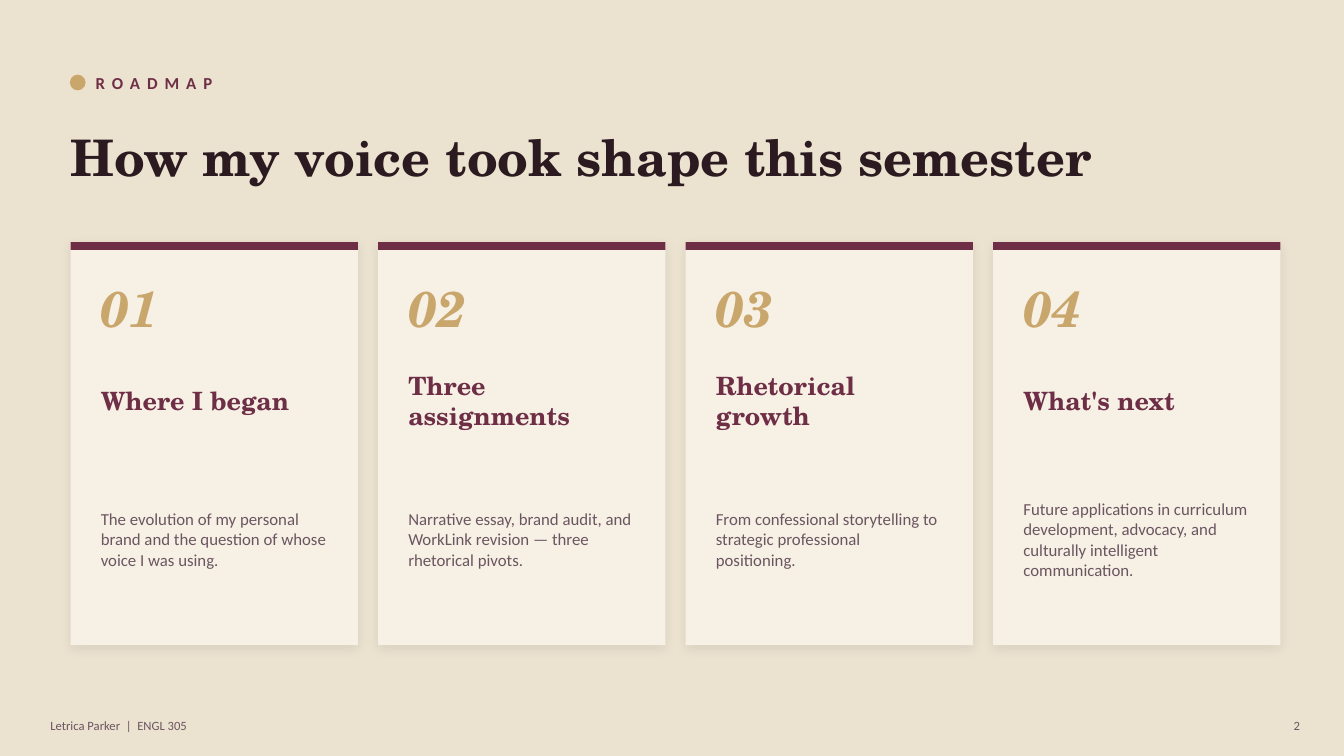
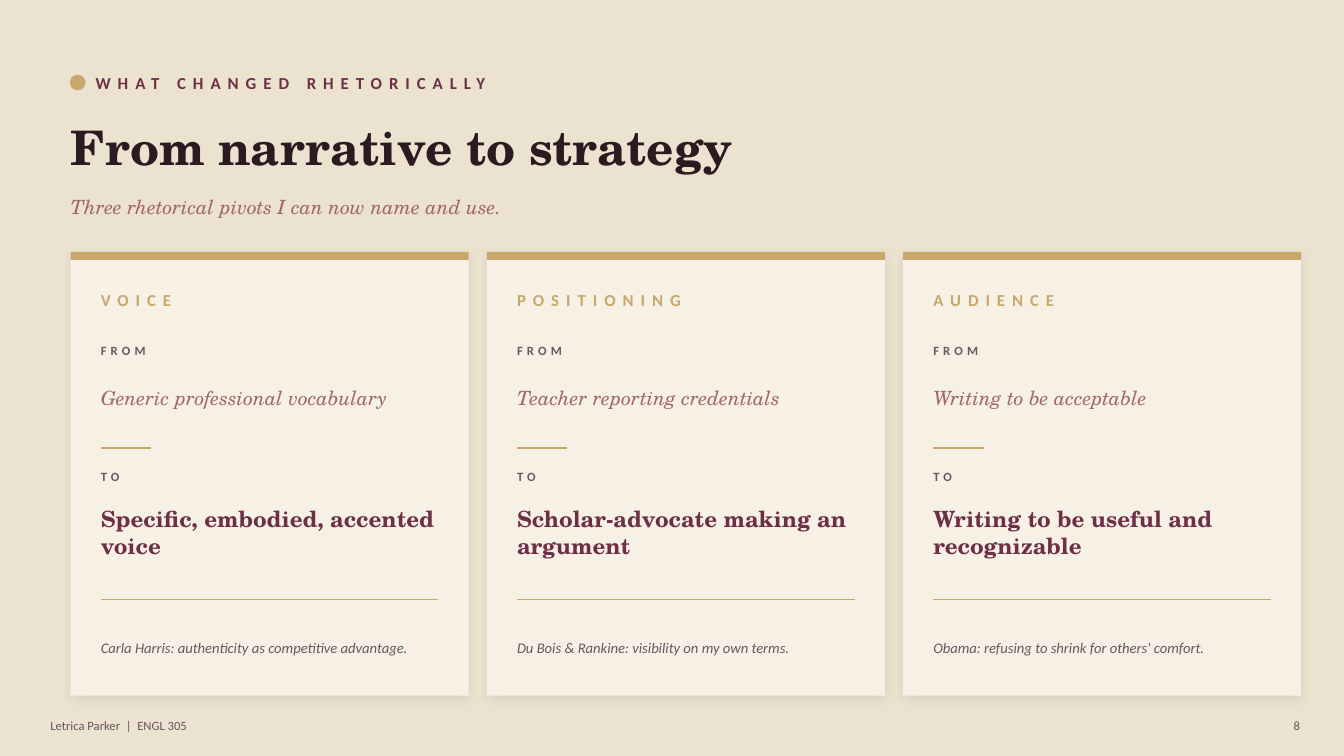
from dataclasses import dataclass
from typing import NamedTuple

from lxml.etree import SubElement
from pptx import Presentation
from pptx.dml.color import RGBColor
from pptx.enum.shapes import MSO_CONNECTOR, MSO_SHAPE
from pptx.enum.text import MSO_ANCHOR, MSO_AUTO_SIZE, PP_ALIGN
from pptx.oxml.ns import qn
from pptx.presentation import Presentation as Deck
from pptx.shapes.autoshape import Shape
from pptx.slide import Slide
from pptx.text.text import TextFrame
from pptx.util import Cm, Pt


@dataclass(frozen=True)
class Theme:
    serif: str = "TeX Gyre Schola"
    sans: str = "Calibri"
    sand: str = "ECE2D0"
    cream: str = "F7F1E5"
    gold: str = "C9A66B"
    plum: str = "6D2E46"
    rose: str = "A26769"
    ink: str = "2B1A20"
    muted: str = "6B5560"
    display: float = 36
    title: float = 34
    heading: float = 18
    result: float = 16
    accent: float = 14
    body: float = 12
    note: float = 10.5
    small: float = 9


THEME = Theme()


class Box(NamedTuple):
    """Left, top, width and height in centimetres."""
    left: float
    top: float
    width: float
    height: float

    def inner(self, top: float, height: float) -> "Box":
        return Box(self.left + CARD_PAD, self.top + top, self.width - 2 * CARD_PAD, height)


class Step(NamedTuple):
    heading: str
    summary: str


class Pivot(NamedTuple):
    topic: str
    before: str
    after: str
    source: str


MARGIN = 1.78
CARD_PAD = 0.76
BAND_HEIGHT = 0.2
TITLE_TOP = 2.79
TITLE_WIDTH = 30.48

STEPS = [
    Step("Where I began",
         "The evolution of my personal brand and the question of whose voice I was using."),
    Step("Three assignments",
         "Narrative essay, brand audit, and WorkLink revision — three rhetorical pivots."),
    Step("Rhetorical growth",
         "From confessional storytelling to strategic professional positioning."),
    Step("What's next",
         "Future applications in curriculum development, advocacy, and culturally "
         "intelligent communication."),
]

PIVOTS = [
    Pivot("VOICE", "Generic professional vocabulary", "Specific, embodied, accented voice",
          "Carla Harris: authenticity as competitive advantage."),
    Pivot("POSITIONING", "Teacher reporting credentials", "Scholar-advocate making an argument",
          "Du Bois & Rankine: visibility on my own terms."),
    Pivot("AUDIENCE", "Writing to be acceptable", "Writing to be useful and recognizable",
          "Obama: refusing to shrink for others' comfort."),
]


# Drawing helpers
def write(frame: TextFrame, text: str, *, size: float, color: str, font: str = THEME.sans,
          bold: bool = False, italic: bool = False, spacing: float = 0,
          align: PP_ALIGN = PP_ALIGN.LEFT) -> None:
    frame.word_wrap = True
    frame.auto_size = MSO_AUTO_SIZE.NONE
    frame.vertical_anchor = MSO_ANCHOR.MIDDLE
    frame.margin_left = frame.margin_top = frame.margin_right = frame.margin_bottom = 0
    paragraph = frame.paragraphs[0]
    paragraph.alignment = align
    run = paragraph.add_run()
    run.text = text
    run.font.name, run.font.size = font, Pt(size)
    run.font.bold, run.font.italic = bold, italic
    run.font.color.rgb = RGBColor.from_string(color)
    if spacing:
        run._r.get_or_add_rPr().set("spc", str(round(spacing * 100)))


def add_text(slide: Slide, box: Box, text: str, **text_format) -> None:
    write(slide.shapes.add_textbox(*map(Cm, box)).text_frame, text, **text_format)


def add_block(slide: Slide, kind: MSO_SHAPE, box: Box, color: str) -> Shape:
    block = slide.shapes.add_shape(kind, *map(Cm, box))
    block.shadow.inherit = False
    block.fill.solid()
    block.fill.fore_color.rgb = RGBColor.from_string(color)
    block.line.fill.background()
    return block


def add_rule(slide: Slide, left: float, top: float, length: float, weight: float) -> None:
    rule = slide.shapes.add_connector(
        MSO_CONNECTOR.STRAIGHT, Cm(left), Cm(top), Cm(left + length), Cm(top))
    rule.line.color.rgb = RGBColor.from_string(THEME.gold)
    rule.line.width = Pt(weight)
    SubElement(rule._element.spPr, qn("a:effectLst"))


def add_soft_shadow(block: Shape) -> None:
    effects = block._element.spPr.find(qn("a:effectLst"))
    shadow = SubElement(effects, qn("a:outerShdw"), blurRad=str(Pt(8)), dist=str(Pt(2)),
                        dir="5400000", algn="bl", rotWithShape="0")
    black = SubElement(shadow, qn("a:srgbClr"), val="000000")
    SubElement(black, qn("a:alpha"), val="8000")


def add_card(slide: Slide, box: Box, band_color: str) -> None:
    add_soft_shadow(add_block(slide, MSO_SHAPE.RECTANGLE, box, THEME.cream))
    add_block(slide, MSO_SHAPE.RECTANGLE, box._replace(height=BAND_HEIGHT), band_color)


def card_row(count: int, first: Box, gap: float) -> list[Box]:
    return [first._replace(left=first.left + i * (first.width + gap)) for i in range(count)]


# Shared frame: footer, section label and title
def add_framed_slide(deck: Deck, number: int, section: str, title: str, *,
                     title_size: float, title_height: float) -> Slide:
    slide = deck.slides.add_slide(deck.slide_layouts[5])
    heading = slide.shapes.title
    heading.left, heading.top, heading.width, heading.height = map(
        Cm, (MARGIN, TITLE_TOP, TITLE_WIDTH, title_height))
    write(heading.text_frame, title, size=title_size, color=THEME.ink,
          font=THEME.serif, bold=True)

    add_text(slide, Box(1.27, 17.91, 15.24, 0.76), "Letrica Parker  |  ENGL 305",
             size=THEME.small, color=THEME.muted)
    add_text(slide, Box(32, 17.91, 0.76, 0.76), str(number),
             size=THEME.small, color=THEME.muted, align=PP_ALIGN.RIGHT)

    dot = add_block(slide, MSO_SHAPE.OVAL, Box(MARGIN, 1.9, 0.36, 0.36), THEME.gold)
    dot.line.color.rgb = RGBColor.from_string(THEME.gold)
    dot.line.width = Pt(1)
    add_text(slide, Box(2.41, 1.65, 15.24, 0.89), section,
             size=THEME.body, color=THEME.plum, bold=True, spacing=5)
    return slide


# Slides
def build_roadmap(deck: Deck) -> None:
    slide = add_framed_slide(deck, 2, "ROADMAP", "How my voice took shape this semester",
                             title_size=THEME.display, title_height=2.29)
    cards = card_row(len(STEPS), Box(MARGIN, 6.1, 7.24, 10.16), gap=0.51)
    for number, (card, step) in enumerate(zip(cards, STEPS), start=1):
        add_card(slide, card, THEME.plum)
        add_text(slide, card.inner(0.76, 1.78), f"{number:02}", size=THEME.display,
                 color=THEME.gold, font=THEME.serif, bold=True, italic=True)
        add_text(slide, card.inner(2.92, 2.16), step.heading, size=THEME.heading,
                 color=THEME.plum, font=THEME.serif, bold=True)
        add_text(slide, card.inner(5.33, 4.32), step.summary, size=THEME.body,
                 color=THEME.muted)


def build_pivots(deck: Deck) -> None:
    slide = add_framed_slide(deck, 8, "WHAT CHANGED RHETORICALLY", "From narrative to strategy",
                             title_size=THEME.title, title_height=1.78)
    quiet = dict(size=THEME.accent, color=THEME.rose, font=THEME.serif, italic=True)
    label = dict(size=THEME.small, color=THEME.muted, bold=True, spacing=3)
    add_text(slide, Box(MARGIN, 4.7, TITLE_WIDTH, 1.02),
             "Three rhetorical pivots I can now name and use.", **quiet)

    cards = card_row(len(PIVOTS), Box(MARGIN, 6.35, 10.03, 11.18), gap=0.46)
    for card, pivot in zip(cards, PIVOTS):
        add_card(slide, card, THEME.gold)
        add_text(slide, card.inner(0.76, 0.89), pivot.topic, size=THEME.body,
                 color=THEME.gold, bold=True, spacing=5)
        add_text(slide, card.inner(2.16, 0.64), "FROM", **label)
        add_text(slide, card.inner(2.79, 1.78), pivot.before, **quiet)
        divider = card.inner(4.95, 0)
        add_rule(slide, divider.left, divider.top, 1.27, weight=1.5)
        add_text(slide, card.inner(5.33, 0.64), "TO", **label)
        add_text(slide, card.inner(5.97, 2.16), pivot.after, size=THEME.result,
                 color=THEME.plum, font=THEME.serif, bold=True)
        divider = card.inner(8.76, 0)
        add_rule(slide, divider.left, divider.top, divider.width, weight=0.75)
        add_text(slide, card.inner(9.02, 1.9), pivot.source, size=THEME.note,
                 color=THEME.muted, italic=True)


def main() -> None:
    deck = Presentation()
    deck.slide_width, deck.slide_height = Cm(33.87), Cm(19.05)
    backdrop = deck.slide_master.background.fill
    backdrop.solid()
    backdrop.fore_color.rgb = RGBColor.from_string(THEME.sand)
    build_roadmap(deck)
    build_pivots(deck)
    deck.save("out.pptx")


if __name__ == "__main__":
    main()
